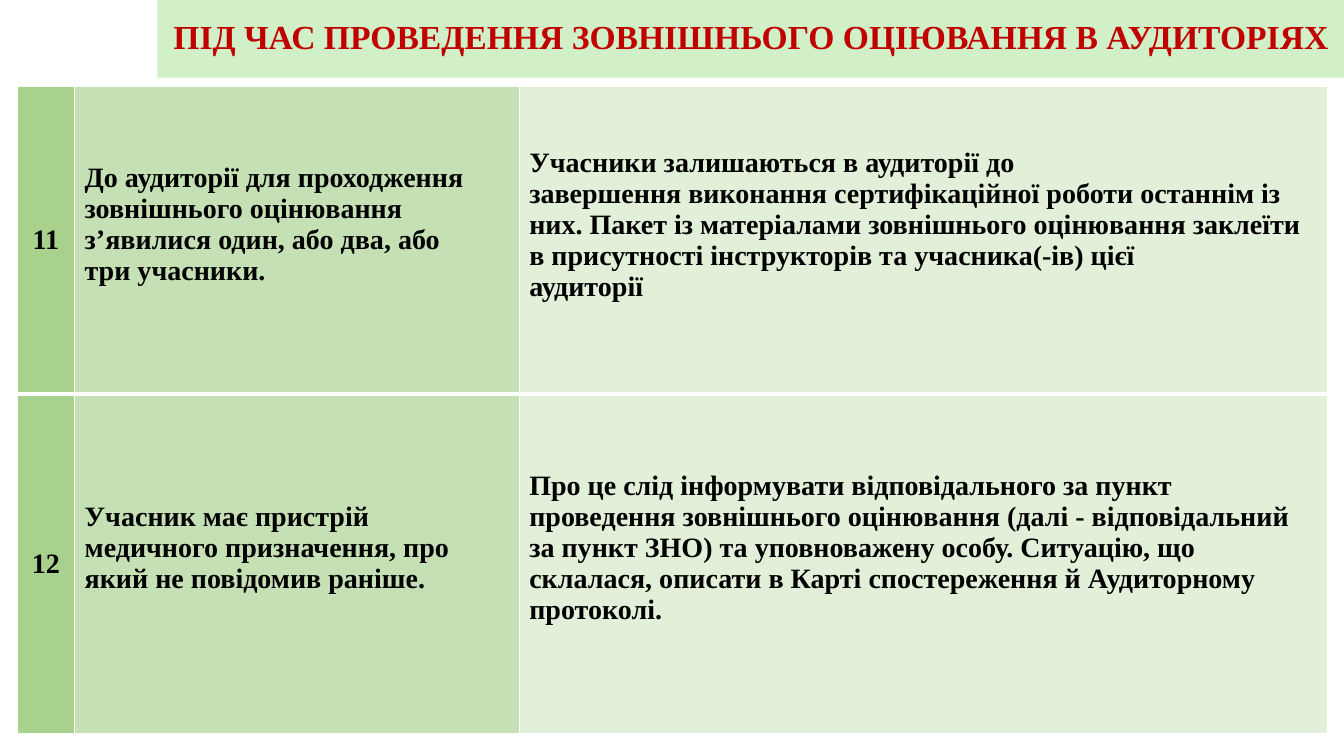
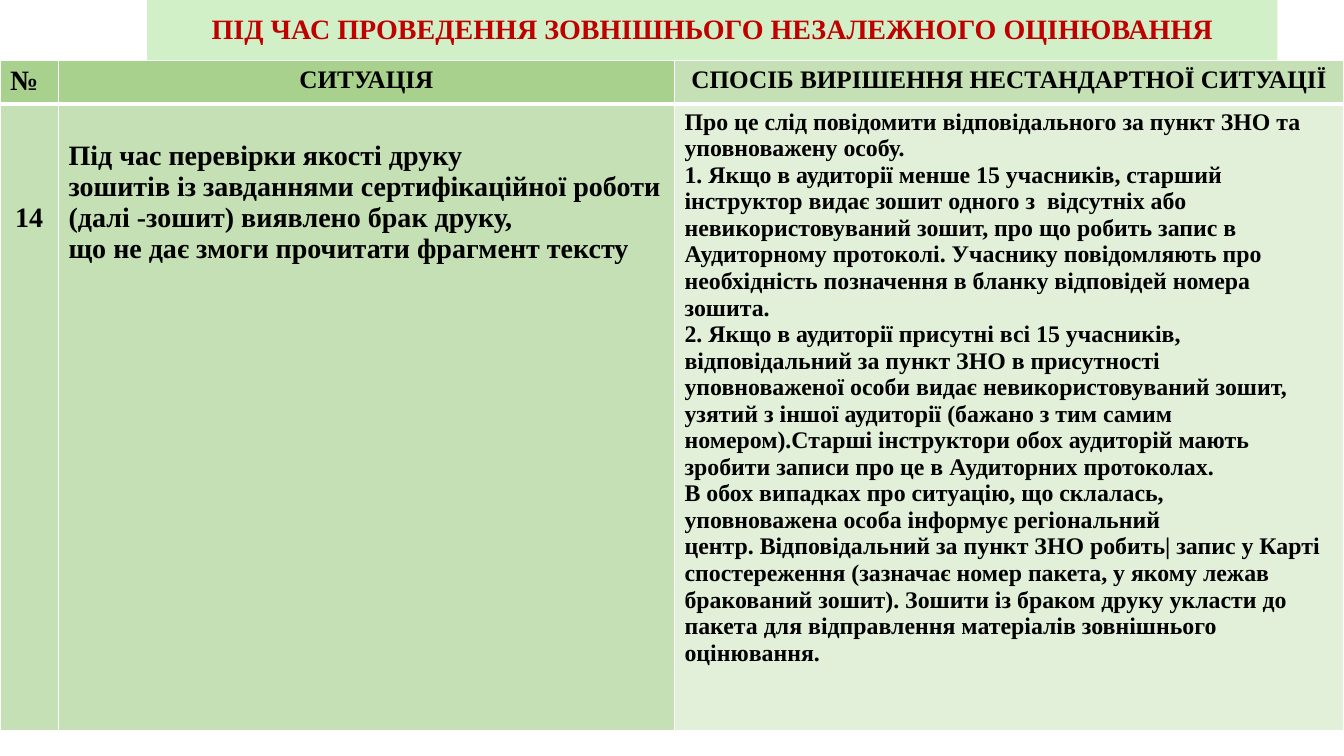
import pptx
import pptx.dml.color
import pptx.enum.shapes
import pptx.enum.text
import pptx.oxml
import pptx.oxml.ns
import pptx.util

PX = 9144  # 100 px to the inch
FONT = "Times New Roman"
BAND, RED, BLACK, WHITE = "D1F0C8", "C00000", "000000", "FFFFFF"
DARK, MID, LIGHT = "A9D18E", "C5E0B4", "E2F0D9"
LEFT, CENTER = pptx.enum.text.PP_ALIGN.LEFT, pptx.enum.text.PP_ALIGN.CENTER
TOP, MIDDLE = pptx.enum.text.MSO_ANCHOR.TOP, pptx.enum.text.MSO_ANCHOR.MIDDLE
PAD_X, PAD_Y, LINE = 10, 5, 31  # cell padding and height of a 20 pt line


def px(n):
    return pptx.util.Emu(n * PX)


def rgb(color):
    return pptx.dml.color.RGBColor.from_string(color)


def fill(target, color):
    target.fill.solid()
    target.fill.fore_color.rgb = rgb(color)


def write(tf, text, size, color, align, spacing=None):
    """Bold text: \\n starts a paragraph, \\v a line."""
    tf.word_wrap = True
    tf.text = text
    for p in tf.paragraphs:
        p.alignment = align
        if spacing:
            p.line_spacing = spacing
        p.font.name = FONT
        p.font.size = pptx.util.Pt(size)
        p.font.bold = True
        p.font.color.rgb = rgb(color)


def add_title(s, text, left, width, height, size):
    sp = s.shapes.add_shape(pptx.enum.shapes.MSO_SHAPE.RECTANGLE,
                            px(left), px(0), px(width), px(height))
    sp.shadow.inherit = False
    sp.line.fill.background()
    fill(sp, BAND)
    tf = sp.text_frame
    tf.vertical_anchor = MIDDLE
    write(tf, text, size, RED, CENTER, 0.9)


def add_borders(cell, **widths):
    tc_pr = cell._tc.get_or_add_tcPr()
    for side in "LRTB":
        tc_pr.append(pptx.oxml.parse_xml(
            f'<a:ln{side} {pptx.oxml.ns.nsdecls("a")} w="{widths.get(side, 1) * 12700}">'
            f'<a:solidFill><a:srgbClr val="{WHITE}"/></a:solidFill></a:ln{side}>'))


def fill_cell(cell, text, color, size=20, align=LEFT, anchor=TOP, above=0, below=0):
    """above and below are the free lines kept around the text."""
    cell.margin_left = cell.margin_right = px(PAD_X)
    cell.margin_top = px(PAD_Y + above * LINE)
    cell.margin_bottom = px(PAD_Y + below * LINE)
    cell.vertical_anchor = anchor
    fill(cell, color)
    write(cell.text_frame, text, size, BLACK, align)


def add_table(s, left, top, cols, heights, rows):
    table = s.shapes.add_table(len(heights), len(cols), px(left), px(top),
                               px(sum(cols)), px(sum(heights))).table
    table.first_row = table.horz_banding = False
    for column, width in zip(table.columns, cols):
        column.width = px(width)
    for i, (height, row) in enumerate(zip(heights, rows)):
        table.rows[i].height = px(height)
        for j, content in enumerate(row):
            cell = table.cell(i, j)
            # The rule under the first row is thicker
            add_borders(cell, **({"T": 3} if i else {"B": 3}))
            fill_cell(cell, **content)


def situation_row(number, situation, solution):
    """A numbered row with vertically centred text."""
    return [
        dict(text=number, color=DARK, align=CENTER, anchor=MIDDLE),
        dict(text=situation, color=MID, anchor=MIDDLE, below=1),
        dict(text=solution, color=LIGHT, anchor=MIDDLE, below=1),
    ]


def build_classrooms(s):
    add_title(s, "ПІД ЧАС ПРОВЕДЕННЯ ЗОВНІШНЬОГО ОЦІЮВАННЯ В АУДИТОРІЯХ",
              156, 1178, 77, 24)
    add_table(s, 17, 86, [57, 441, 802], [305, 337], [
        situation_row(
            "11",
            "До аудиторії для проходження\vзовнішнього оцінювання\v"
            "з’явилися один, або два, або\vтри учасники.",
            "Учасники залишаються в аудиторії до\vзавершення виконання "
            "сертифікаційної роботи останнім із них. Пакет із матеріалами "
            "зовнішнього оцінювання заклеїти в присутності інструкторів та "
            "учасника(-ів) цієї\vаудиторії"),
        situation_row(
            "12",
            "Учасник має пристрій медичного призначення, про який не "
            "повідомив раніше.",
            "Про це слід інформувати відповідального за пункт проведення "
            "зовнішнього оцінювання (далі - відповідальний за пункт ЗНО) та "
            "уповноважену особу. Ситуацію, що склалася, описати в Карті "
            "спостереження й Аудиторному\vпротоколі."),
    ])


def build_misprints(s):
    add_title(s, "ПІД ЧАС ПРОВЕДЕННЯ ЗОВНІШНЬОГО НЕЗАЛЕЖНОГО ОЦІНЮВАННЯ",
              146, 1121, 60, 20)
    header = [
        dict(text="№", color=DARK),
        dict(text="СИТУАЦІЯ", color=DARK, size=18, align=CENTER),
        dict(text="СПОСІБ ВИРІШЕННЯ НЕСТАНДАРТНОЇ СИТУАЦІЇ", color=MID,
             size=18, align=CENTER),
    ]
    situation = (
        "Під час перевірки якості друку\vзошитів із завданнями "
        "сертифікаційної роботи (далі -зошит) виявлено брак друку,\v"
        "що не дає змоги прочитати фрагмент тексту")
    solution = [
        "Про це слід повідомити відповідального за пункт ЗНО та уповноважену "
        "особу.",
        "1. Якщо в аудиторії менше 15 учасників, старший інструктор видає "
        "зошит одного з  відсутніх або невикористовуваний зошит, про що "
        "робить запис в Аудиторному протоколі. Учаснику повідомляють про "
        "необхідність позначення в бланку відповідей номера зошита.",
        "2. Якщо в аудиторії присутні всі 15 учасників, відповідальний за "
        "пункт ЗНО в присутності\vуповноваженої особи видає "
        "невикористовуваний зошит, узятий з іншої аудиторії (бажано з тим "
        "самим номером).Старші інструктори обох аудиторій мають зробити "
        "записи про це в Аудиторних протоколах.",
        "В обох випадках про ситуацію, що склалась,\vуповноважена особа "
        "інформує регіональний\vцентр. Відповідальний за пункт ЗНО робить| "
        "запис у Карті спостереження (зазначає номер пакета, у якому лежав "
        "бракований зошит). Зошити із браком друку укласти до пакета для "
        "відправлення матеріалів зовнішнього оцінювання.",
    ]
    add_table(s, 0, 60, [58, 611, 664], [43, 622], [
        header,
        [
            dict(text="14", color=MID, align=CENTER, above=3),
            dict(text=situation, color=MID, above=1),
            dict(text="\n".join(solution), color=LIGHT, size=17),
        ],
    ])


def main():
    prs = pptx.Presentation()
    prs.slide_width, prs.slide_height = px(1333), px(750)
    for build in (build_classrooms, build_misprints):
        build(prs.slides.add_slide(prs.slide_layouts[6]))
    prs.save("out.pptx")


if __name__ == "__main__":
    main()
